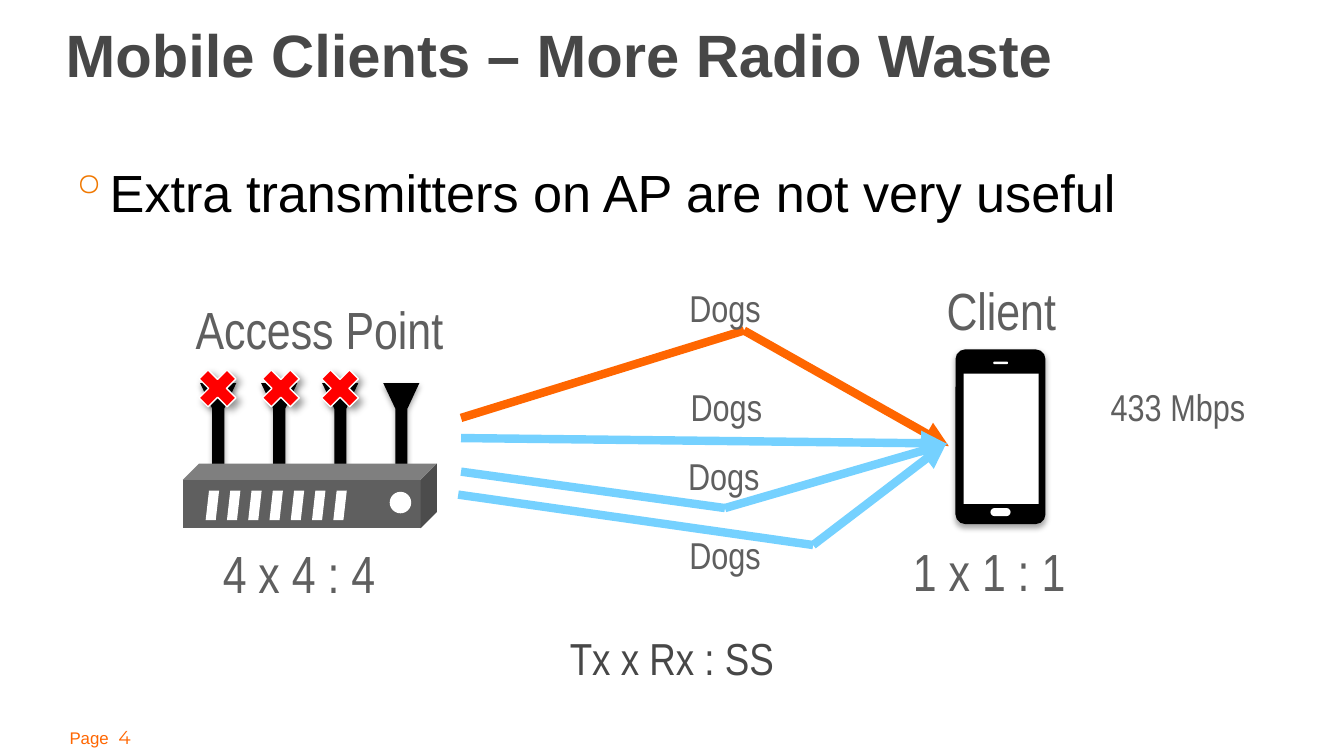
"""Build the slide about radio waste with mobile clients."""
from itertools import pairwise

from lxml.etree import SubElement
from pptx import Presentation
from pptx.dml.color import RGBColor
from pptx.enum.shapes import MSO_CONNECTOR, MSO_SHAPE
from pptx.enum.text import MSO_AUTO_SIZE, PP_ALIGN
from pptx.oxml.ns import qn
from pptx.util import Pt

COLORS = {
    "title": "474747", "label": "5F5F5F", "black": "000000", "white": "FFFFFF",
    "orange": "FF6600", "blue": "75D1FF", "red": "FF0000", "bullet": "F07800",
}
SOFT_SHADOW = {"alpha": 35, "blur": 3.1, "distance": 1.8, "angle": 90}
CROSS_SHADOW = {"alpha": 40, "blur": 4, "distance": 3, "angle": 45}

TITLE = "Mobile Clients – More Radio Waste"
BULLET = "Extra transmitters on AP are not very useful"
LABELS = [
    ("Client", 460.1, 145.4, 152.6, 28, "label"),
    ("Access Point", 77.8, 155.5, 186.5, 28, "label"),
    ("4 x 4 : 4", 102.2, 286.6, 115.9, 28, "label"),
    ("1 x 1 : 1", 472.3, 285.1, 115.2, 28, "label"),
    ("433 Mbps", 580.3, 202.3, 101.5, 20, "label"),
    ("Dogs", 337.7, 149, 101.5, 20, "label"),
    ("Dogs", 338.4, 202.3, 101.5, 20, "label"),
    ("Dogs", 337, 239, 101.5, 20, "label"),
    ("Dogs", 337.7, 281.5, 101.5, 20, "label"),
    ("Tx x Rx : SS", 271.4, 334.1, 177.1, 24, "title"),
]
SIGNALS = [
    ("orange", [(247, 223.9), (398.6, 177.1), (508.3, 239)]),
    ("blue", [(247, 252.7), (388.4, 272.2), (507.6, 237.6)]),
    ("blue", [(247, 234.7), (506.9, 237.6)]),
    ("blue", [(245.5, 265), (435.6, 292), (506.9, 237.6)]),
]
ANTENNA = [(0, 0), (19.4, 0), (13, 13.7), (13, 49.7), (6.5, 49.7), (6.5, 13.7)]
ANTENNA_LEFT, ANTENNA_TOP, ANTENNA_STEP, ANTENNA_COUNT = 107.2, 205.2, 32.7, 4
VENT_LEFT, VENT_STEP, VENT_COUNT = 110.2, 11.4, 7
CROSS_LEFTS = [167.8, 136.1, 102.2]
PHONE = [
    (MSO_SHAPE.ROUNDED_RECTANGLE, (511.9, 187.2, 48.2, 93.6), "black", 0.108),
    (MSO_SHAPE.RECTANGLE, (516.2, 200.2, 40.3, 69.8), "white", None),
    (MSO_SHAPE.ROUNDED_RECTANGLE, (530.6, 272.2, 10.8, 4.3), "white", 0.5),
    (MSO_SHAPE.ROUNDED_RECTANGLE, (532.1, 193.7, 7.9, 1.4), "white", 0.5),
]


def color(name):
    return RGBColor.from_string(COLORS[name])


def add_shadow(shape, alpha, blur, distance, angle):
    effects = shape._element.spPr.find(qn("a:effectLst"))
    shadow = SubElement(effects, qn("a:outerShdw"), blurRad=str(Pt(blur)),
                        dist=str(Pt(distance)), dir=str(angle * 60000), rotWithShape="0")
    tint = SubElement(shadow, qn("a:srgbClr"), val=COLORS["black"])
    SubElement(tint, qn("a:alpha"), val=str(alpha * 1000))


def style(shape, fill, shadow=None):
    shape.fill.solid()
    shape.fill.fore_color.rgb = color(fill)
    shape.line.fill.background()
    shape.shadow.inherit = False
    if shadow:
        add_shadow(shape, **shadow)


def add_shape(shapes, kind, place, fill, shadow=None, roundness=None):
    shape = shapes.add_shape(kind, *map(Pt, place))
    style(shape, fill, shadow)
    if roundness is not None:
        shape.adjustments[0] = roundness
    return shape


def add_text(page, place, spans, wrap=True, align=PP_ALIGN.LEFT, grow=False):
    box = page.shapes.add_textbox(*map(Pt, place))
    frame = box.text_frame
    frame.word_wrap = wrap
    if grow:
        frame.auto_size = MSO_AUTO_SIZE.SHAPE_TO_FIT_TEXT
    paragraph = frame.paragraphs[0]
    paragraph.alignment = align
    for text, size, font, tint, bold in spans:
        span = paragraph.add_run()
        span.text = text
        span.font.size, span.font.name, span.font.bold = Pt(size), font, bold
        span.font.color.rgb = color(tint)
    return frame


def add_headings(page):
    add_text(page, (30.2, 385.2, 54.7, 19.4),
             [("Page ", 9, "Arial", "orange", False), (" 4", 10, "Montserrat", "orange", False)],
             wrap=False, grow=True)
    title = add_text(page, (28.1, 2.2, 642.2, 40.3), [(TITLE, 32, "Arial", "title", True)])
    title.margin_top = Pt(7.2)
    body = add_text(page, (29.5, 84.2, 673.2, 41.8), [(BULLET, 28, "Arial", "black", False)])
    paragraph = body.paragraphs[0]
    paragraph.line_spacing = Pt(31.6)
    properties = paragraph._p.get_or_add_pPr()
    properties.set("marL", str(Pt(18)))
    properties.set("indent", str(-Pt(18)))
    SubElement(SubElement(properties, qn("a:buClr")), qn("a:srgbClr"), val=COLORS["bullet"])
    SubElement(properties, qn("a:buChar"), char="◦")


def add_access_point(page):
    shapes = page.shapes.add_group_shape().shapes
    for index in range(ANTENNA_COUNT):
        left = ANTENNA_LEFT + index * ANTENNA_STEP
        points = [(Pt(left + x), Pt(ANTENNA_TOP + y)) for x, y in ANTENNA]
        builder = shapes.build_freeform(*points[0])
        builder.add_line_segments(points[1:], close=True)
        style(builder.convert_to_shape(), "black", SOFT_SHADOW)
    add_shape(shapes, MSO_SHAPE.CUBE, (97.9, 248.4, 136.1, 34.6), "label")
    for index in range(VENT_COUNT):
        place = (VENT_LEFT + index * VENT_STEP, 262.8, 7.2, 15.8)
        add_shape(shapes, MSO_SHAPE.PARALLELOGRAM, place, "white")
    add_shape(shapes, MSO_SHAPE.OVAL, (208.8, 263.5, 11.5, 11.5), "white")


def add_phone(page):
    shapes = page.shapes.add_group_shape().shapes
    for kind, place, fill, roundness in PHONE:
        add_shape(shapes, kind, place, fill, SOFT_SHADOW, roundness)


def add_crosses(page):
    for left in CROSS_LEFTS:
        cross = add_shape(page.shapes, MSO_SHAPE.MATH_MULTIPLY, (left, 193.7, 28.8, 28.8),
                          "red", CROSS_SHADOW)
        cross.line.color.rgb = color("white")
        cross.line.width = Pt(0.75)


def add_signal(page, tint, points):
    for start, end in pairwise(points):
        line = page.shapes.add_connector(MSO_CONNECTOR.STRAIGHT, *map(Pt, start + end))
        line.line.color.rgb = color(tint)
        line.line.width = Pt(4.5)
        if end == points[-1]:
            SubElement(line.line._get_or_add_ln(), qn("a:tailEnd"), type="triangle")
        SubElement(line._element.spPr, qn("a:effectLst"))


def main():
    deck = Presentation()
    deck.slide_width, deck.slide_height = Pt(720), Pt(405)
    page = deck.slides.add_slide(deck.slide_layouts[6])
    add_headings(page)
    add_access_point(page)
    add_phone(page)
    add_crosses(page)
    for tint, points in SIGNALS:
        add_signal(page, tint, points)
    for text, left, top, width, size, tint in LABELS:
        add_text(page, (left, top, width, size * 1.15 + 8.6),
                 [(text, size, "Arial Narrow", tint, False)],
                 align=PP_ALIGN.CENTER, grow=True)
    deck.save("out.pptx")


if __name__ == "__main__":
    main()
